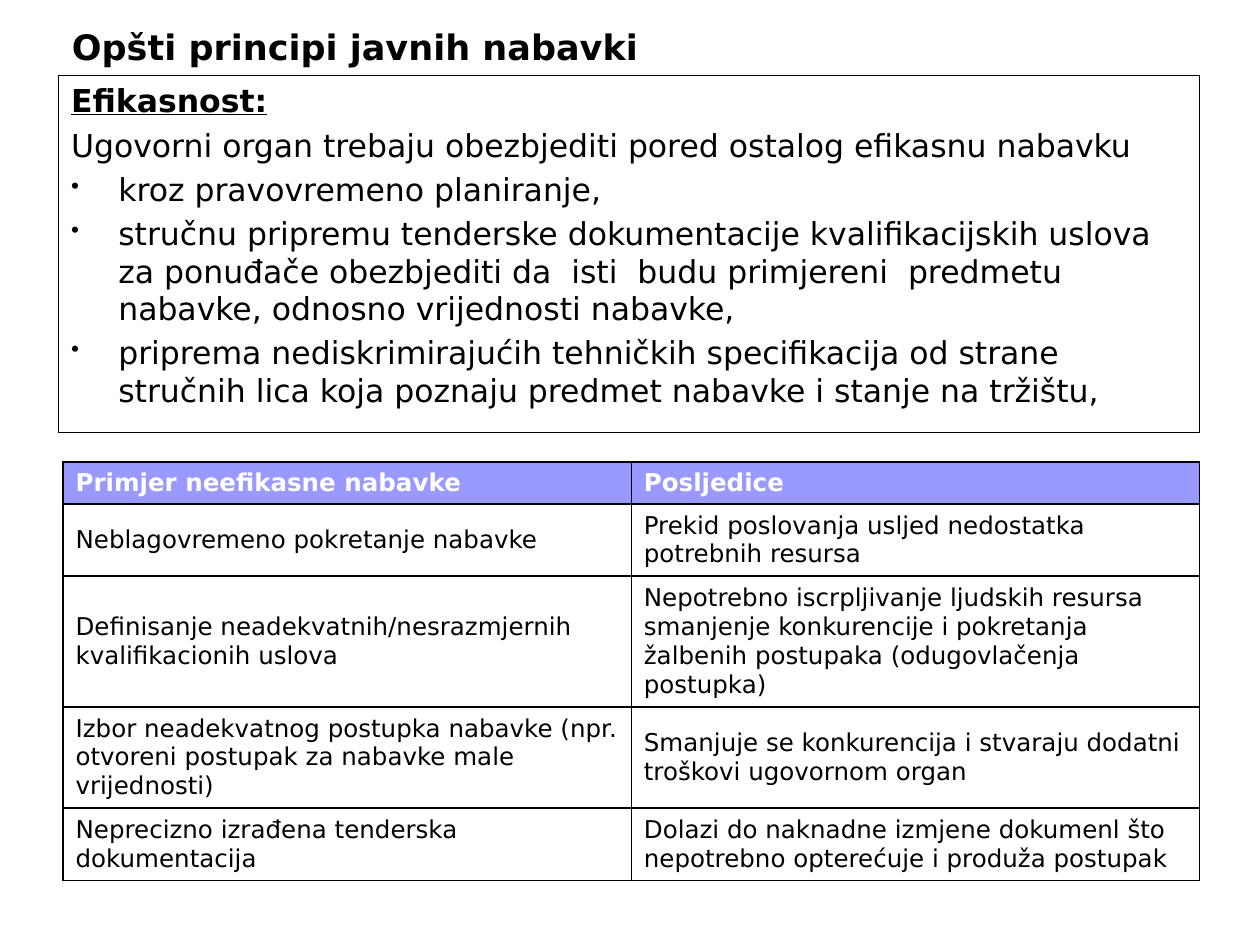
from lxml import etree
from pptx import Presentation
from pptx.dml.color import RGBColor
from pptx.enum.shapes import MSO_SHAPE
from pptx.enum.text import MSO_ANCHOR, PP_ALIGN
from pptx.oxml.ns import qn
from pptx.util import Pt

RECTANGLE = MSO_SHAPE.RECTANGLE
TOP, MIDDLE = MSO_ANCHOR.TOP, MSO_ANCHOR.MIDDLE
LEFT, JUSTIFY = PP_ALIGN.LEFT, PP_ALIGN.JUSTIFY

BLACK = RGBColor(0x00, 0x00, 0x00)
WHITE = RGBColor(0xFF, 0xFF, 0xFF)
LAVENDER = RGBColor(0x99, 0x99, 0xFF)
FONT = "DejaVu Sans"

# Content
TITLE = "Opšti principi javnih nabavki"
HEADING = "Efikasnost:"
INTRO = "Ugovorni organ trebaju obezbjediti pored ostalog efikasnu nabavku"
MEASURES = [
    "kroz pravovremeno planiranje,",
    "stručnu pripremu tenderske dokumentacije kvalifikacijskih uslova za "
    "ponuđače obezbjediti da  isti  budu primjereni  predmetu nabavke, "
    "odnosno vrijednosti nabavke,",
    "priprema nediskrimirajućih tehničkih specifikacija od strane  stručnih "
    "lica koja poznaju predmet nabavke i stanje na tržištu,",
]
# Row height, example, consequence
ROWS = [
    (24, "Primjer neefikasne nabavke", "Posljedice"),
    (41, "Neblagovremeno pokretanje nabavke",
     "Prekid poslovanja usljed nedostatka potrebnih resursa"),
    (75, "Definisanje neadekvatnih/nesrazmjernih kvalifikacionih uslova",
     "Nepotrebno iscrpljivanje ljudskih resursa smanjenje konkurencije i "
     "pokretanja žalbenih postupaka (odugovlačenja postupka)"),
    (57.5, "Izbor neadekvatnog postupka nabavke (npr. otvoreni postupak za "
     "nabavke male vrijednosti)",
     "Smanjuje se konkurencija i stvaraju dodatni troškovi ugovornom organ"),
    (41.5, "Neprecizno izrađena tenderska dokumentacija",
     "Dolazi do naknadne izmjene dokumenl što nepotrebno opterećuje i "
     "produža postupak"),
]

# Lengths in points
TITLE_AREA = (34, 11, 648, 31.5)
BOX_AREA = (33.5, 43, 652, 204)
TABLE_LEFT, TABLE_TOP, COLUMN_WIDTH = 36, 264, 324.75
INDENT, PARAGRAPH_GAP, CELL_GAP = 27, 3.6, 3

BODY = {"name": FONT, "size": Pt(18), "bold": False}
STRONG = {**BODY, "bold": True, "underline": True}
TITLE_FORMAT = {**BODY, "size": Pt(20), "bold": True}
CELL = {**BODY, "size": Pt(14)}
HEADER = {**CELL, "bold": True}


def write(para, text, font_format, color=BLACK):
    span = para.add_run()
    span.text = text
    for name, value in font_format.items():
        setattr(span.font, name, value)
    span.font.color.rgb = color


def add_bullet(para):
    props = para._p.get_or_add_pPr()
    props.set("marL", str(Pt(INDENT)))
    props.set("indent", str(-Pt(INDENT)))
    etree.SubElement(props, qn("a:buSzPct")).set("val", "75000")
    etree.SubElement(props, qn("a:buChar")).set("char", "•")


def add_borders(cell):
    props = cell._tc.get_or_add_tcPr()
    for position, side in enumerate(("lnL", "lnR", "lnT", "lnB")):
        line = etree.Element(qn(f"a:{side}"), w=str(Pt(1)))
        fill = etree.SubElement(line, qn("a:solidFill"))
        etree.SubElement(fill, qn("a:srgbClr")).set("val", str(BLACK))
        props.insert(position, line)


deck = Presentation()
deck.slide_width, deck.slide_height = Pt(720), Pt(540)
slide = deck.slides.add_slide(deck.slide_layouts[6])

# Title
title = slide.shapes.add_textbox(*map(Pt, TITLE_AREA))
title.text_frame.word_wrap = True
write(title.text_frame.paragraphs[0], TITLE, TITLE_FORMAT)

# Framed explanation
box = slide.shapes.add_shape(RECTANGLE, *map(Pt, BOX_AREA))
box.shadow.inherit = False
box.fill.background()
box.line.color.rgb = BLACK
box.line.width = Pt(0.75)
frame = box.text_frame
frame.word_wrap = True
frame.vertical_anchor = TOP
heading = frame.paragraphs[0]
heading.alignment = JUSTIFY
write(heading, HEADING, STRONG)
for index, text in enumerate([INTRO, *MEASURES]):
    para = frame.add_paragraph()
    para.alignment = LEFT
    para.space_before = Pt(PARAGRAPH_GAP)
    if index:
        add_bullet(para)
    write(para, text, BODY)

# Table of examples and consequences
table = slide.shapes.add_table(
    len(ROWS), 2, Pt(TABLE_LEFT), Pt(TABLE_TOP),
    Pt(2 * COLUMN_WIDTH), Pt(sum(row[0] for row in ROWS))).table
for column in table.columns:
    column.width = Pt(COLUMN_WIDTH)
for r, (height, *texts) in enumerate(ROWS):
    table.rows[r].height = Pt(height)
    for c, text in enumerate(texts):
        cell = table.cell(r, c)
        cell.vertical_anchor = MIDDLE
        para = cell.text_frame.paragraphs[0]
        para.space_after = Pt(CELL_GAP)
        if r == 0:
            cell.fill.solid()
            cell.fill.fore_color.rgb = LAVENDER
            write(para, text, HEADER, WHITE)
        else:
            cell.fill.background()
            write(para, text, CELL)
        add_borders(cell)

deck.save("out.pptx")
